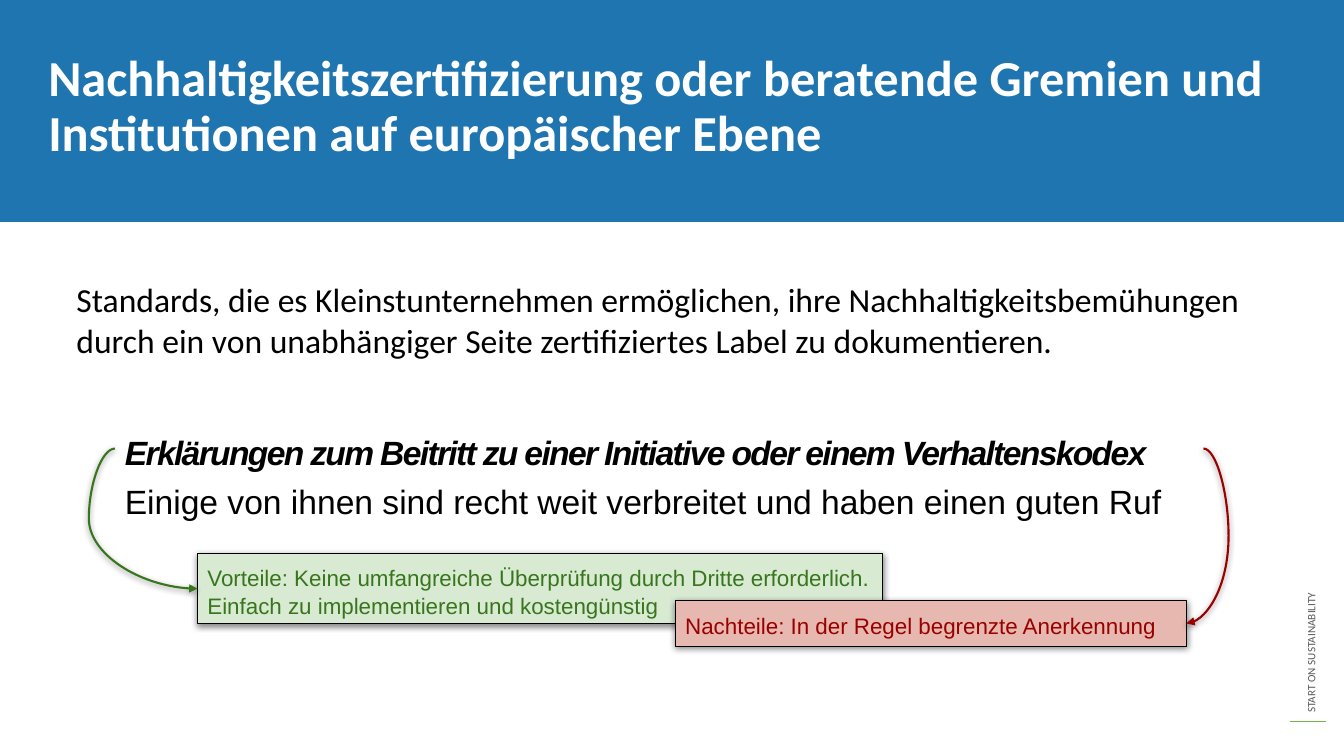
from dataclasses import dataclass, field
from typing import Any

from pptx import Presentation
from pptx.dml.color import RGBColor
from pptx.enum.shapes import MSO_CONNECTOR, MSO_SHAPE
from pptx.enum.text import MSO_ANCHOR, MSO_AUTO_SIZE, PP_ALIGN
from pptx.oxml import parse_xml
from pptx.oxml.ns import nsdecls, qn
from pptx.util import Pt

RECTANGLE = MSO_SHAPE.RECTANGLE
CURVE, STRAIGHT = MSO_CONNECTOR.CURVE, MSO_CONNECTOR.STRAIGHT
TOP, GROW, FIXED = MSO_ANCHOR.TOP, MSO_AUTO_SIZE.SHAPE_TO_FIT_TEXT, MSO_AUTO_SIZE.NONE
LEFT, JUSTIFY = PP_ALIGN.LEFT, PP_ALIGN.JUSTIFY

SLIDE_WIDTH, SLIDE_HEIGHT = 960, 540
INSET = 7.2
COLORS = {
    "blue": "1E75B0", "white": "FFFFFF", "black": "000000", "ink": "010101",
    "grey": "595959", "leaf": "73B64B", "green": "38761D", "mint": "D9EAD3",
    "red": "990000", "rose": "E6B8AF",
}
SHADOW = (
    '<a:outerShdw blurRad="57150" dist="19050" dir="5400000" algn="bl" rotWithShape="0">'
    '<a:srgbClr val="000000"><a:alpha val="48000"/></a:srgbClr></a:outerShdw>'
)


@dataclass(frozen=True)
class Area:
    left: float
    top: float
    width: float
    height: float

    def lengths(self) -> tuple[Pt, ...]:
        return tuple(Pt(v) for v in (self.left, self.top, self.width, self.height))


@dataclass(frozen=True)
class TextItem:
    area: Area
    text: str
    size: float
    color: str
    font: str = "Arial"
    style: dict[str, bool] = field(default_factory=dict)
    align: Any = LEFT
    line_spacing: float = 1.0
    inset_y: float = INSET
    grow: bool = False
    rotation: float = 0
    tracking: float = 0
    fill: str = ""


@dataclass(frozen=True)
class CurvedArrow:
    start: tuple[float, float]
    end: tuple[float, float]
    bend: int
    color: str


TEXTS = [
    TextItem(Area(776.2, 347, 321.1, 17.3), "START ON SUSTAINABILITY", 8, "grey",
             "Calibri", inset_y=3.6, grow=True, rotation=270),
    TextItem(Area(27.4, 34.6, 912.2, 63.4),
             "Nachhaltigkeitszertifizierung oder beratende Gremien und "
             "Institutionen auf europäischer Ebene",
             36, "white", "Calibri", {"bold": True}, line_spacing=0.9, inset_y=3.6),
    TextItem(Area(82.1, 300.2, 778.3, 41),
             "Erklärungen zum Beitritt zu einer Initiative oder einem Verhaltenskodex",
             24, "ink", style={"bold": True, "italic": True}, align=JUSTIFY,
             line_spacing=1.03, tracking=-1.2),
    TextItem(Area(82.1, 336.2, 766.1, 32.4),
             "Einige von ihnen sind recht weit verbreitet und haben einen guten Ruf",
             24, "black"),
    TextItem(Area(141.1, 395.3, 489.6, 50.4),
             "Vorteile: Keine umfangreiche Überprüfung durch Dritte erforderlich. "
             "Einfach zu implementieren und kostengünstig",
             16, "green", line_spacing=1.03, fill="mint"),
    TextItem(Area(482.4, 429.1, 365, 32.4),
             "Nachteile: In der Regel begrenzte Anerkennung",
             16, "red", align=JUSTIFY, line_spacing=1.03, fill="rose"),
    TextItem(Area(47.5, 192.2, 871.9, 72.7),
             "Standards, die es Kleinstunternehmen ermöglichen, ihre "
             "Nachhaltigkeitsbemühungen durch ein von unabhängiger Seite "
             "zertifiziertes Label zu dokumentieren.",
             24, "black", "Calibri", grow=True),
]
ARROWS = [
    CurvedArrow((82.1, 320.4), (141.1, 420.5), -31600, "green"),
    CurvedArrow((859.7, 320.4), (847.4, 445.3), -145700, "red"),
]


def rgb(name: str) -> RGBColor:
    return RGBColor.from_string(COLORS[name])


def set_all(target: Any, values: dict[str, Any]) -> None:
    for name, value in values.items():
        setattr(target, name, value)


def set_effects(shape: Any, effects: str = "") -> None:
    """Call after the line is set: the effect list follows it in the schema."""
    shape.element.spPr.append(
        parse_xml(f"<a:effectLst {nsdecls('a')}>{effects}</a:effectLst>"))


def add_rectangle(page: Any, area: Area, fill: str) -> Any:
    box = page.shapes.add_shape(RECTANGLE, *area.lengths())
    box.shadow.inherit = False
    box.fill.solid()
    box.fill.fore_color.rgb = rgb(fill)
    box.line.fill.background()
    return box


def add_text(page: Any, item: TextItem) -> None:
    if item.fill:
        box = add_rectangle(page, item.area, item.fill)
        box.line.color.rgb = rgb("black")
        box.line.width = Pt(0.75)
        box.element.spPr.find(qn("a:effectLst")).append(
            parse_xml(SHADOW.replace("<a:outerShdw", f"<a:outerShdw {nsdecls('a')}", 1)))
    else:
        box = page.shapes.add_textbox(*item.area.lengths())
    box.rotation = item.rotation
    set_all(box.text_frame, {
        "word_wrap": True, "vertical_anchor": TOP,
        "auto_size": GROW if item.grow else FIXED,
        "margin_left": Pt(INSET), "margin_right": Pt(INSET),
        "margin_top": Pt(item.inset_y), "margin_bottom": Pt(item.inset_y),
    })
    para = box.text_frame.paragraphs[0]
    set_all(para, {"alignment": item.align, "line_spacing": item.line_spacing})
    span = para.add_run()
    span.text = item.text
    set_all(span.font, {"name": item.font, "size": Pt(item.size), **item.style})
    span.font.color.rgb = rgb(item.color)
    if item.tracking:
        for properties in box.element.iter(qn("a:rPr")):
            properties.set("spc", str(round(item.tracking * 100)))


def add_line(page: Any, kind: Any, start: tuple[float, float],
             end: tuple[float, float], color: str, width: float) -> Any:
    line = page.shapes.add_connector(kind, *(Pt(v) for v in (*start, *end)))
    line.line.color.rgb = rgb(color)
    line.line.width = Pt(width)
    return line


def add_curved_arrow(page: Any, arrow: CurvedArrow) -> None:
    curve = add_line(page, CURVE, arrow.start, arrow.end, arrow.color, 1.5)
    properties = curve.element.spPr
    properties.find(qn("a:ln")).append(
        parse_xml(f'<a:tailEnd {nsdecls("a")} type="triangle"/>'))
    properties.find(qn("a:prstGeom")).find(qn("a:avLst")).append(
        parse_xml(f'<a:gd {nsdecls("a")} name="adj1" fmla="val {arrow.bend}"/>'))
    set_effects(curve, SHADOW)


def main() -> None:
    deck = Presentation()
    set_all(deck, {"slide_width": Pt(SLIDE_WIDTH), "slide_height": Pt(SLIDE_HEIGHT)})
    page = deck.slides.add_slide(deck.slide_layouts[6])
    add_rectangle(page, Area(0, 0, SLIDE_WIDTH, 158.6), "blue")
    set_effects(add_line(page, STRAIGHT, (921.6, 515.5), (946.8, 515.5), "leaf", 1))
    for item in TEXTS:
        add_text(page, item)
    for arrow in ARROWS:
        add_curved_arrow(page, arrow)
    deck.save("out.pptx")


if __name__ == "__main__":
    main()
